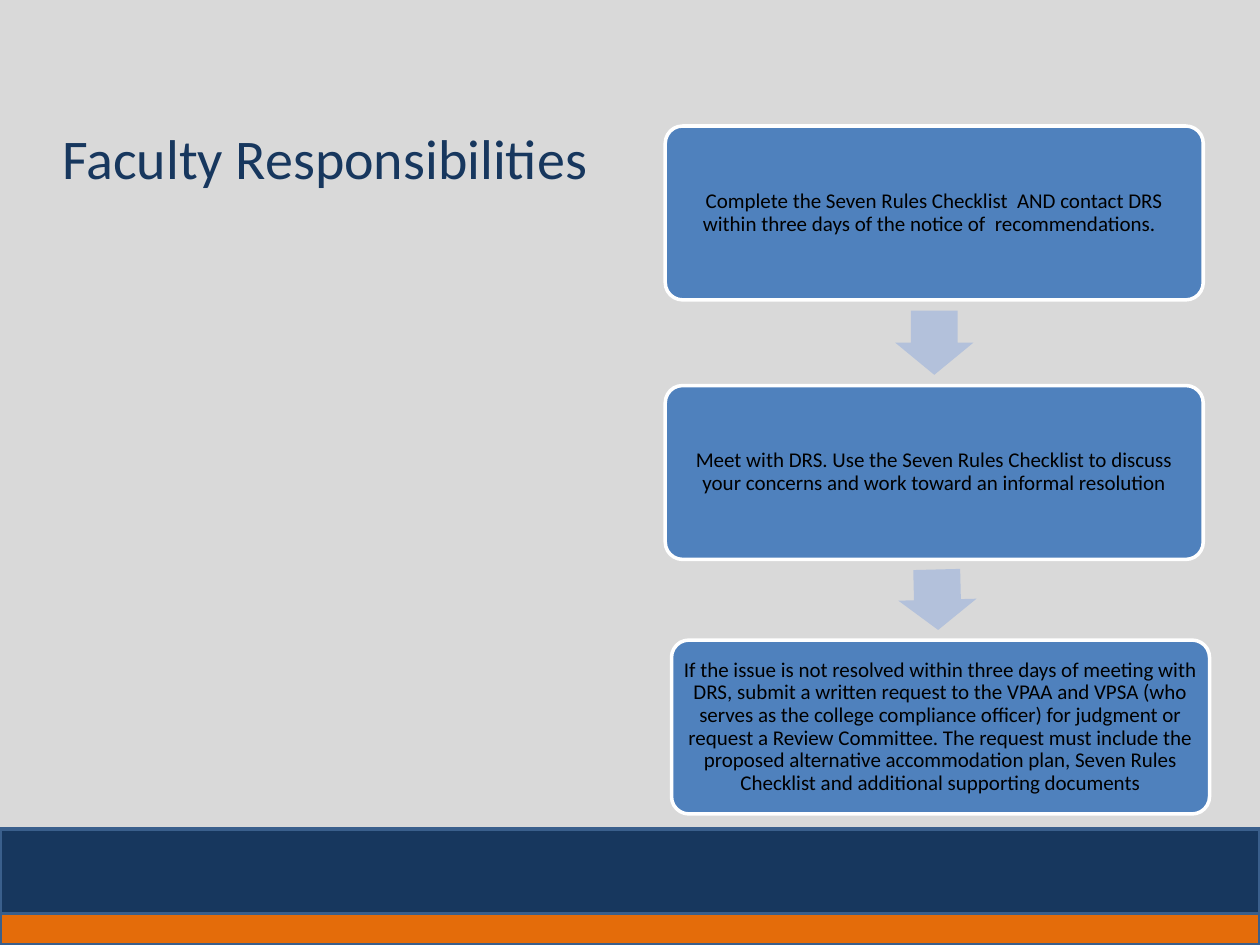
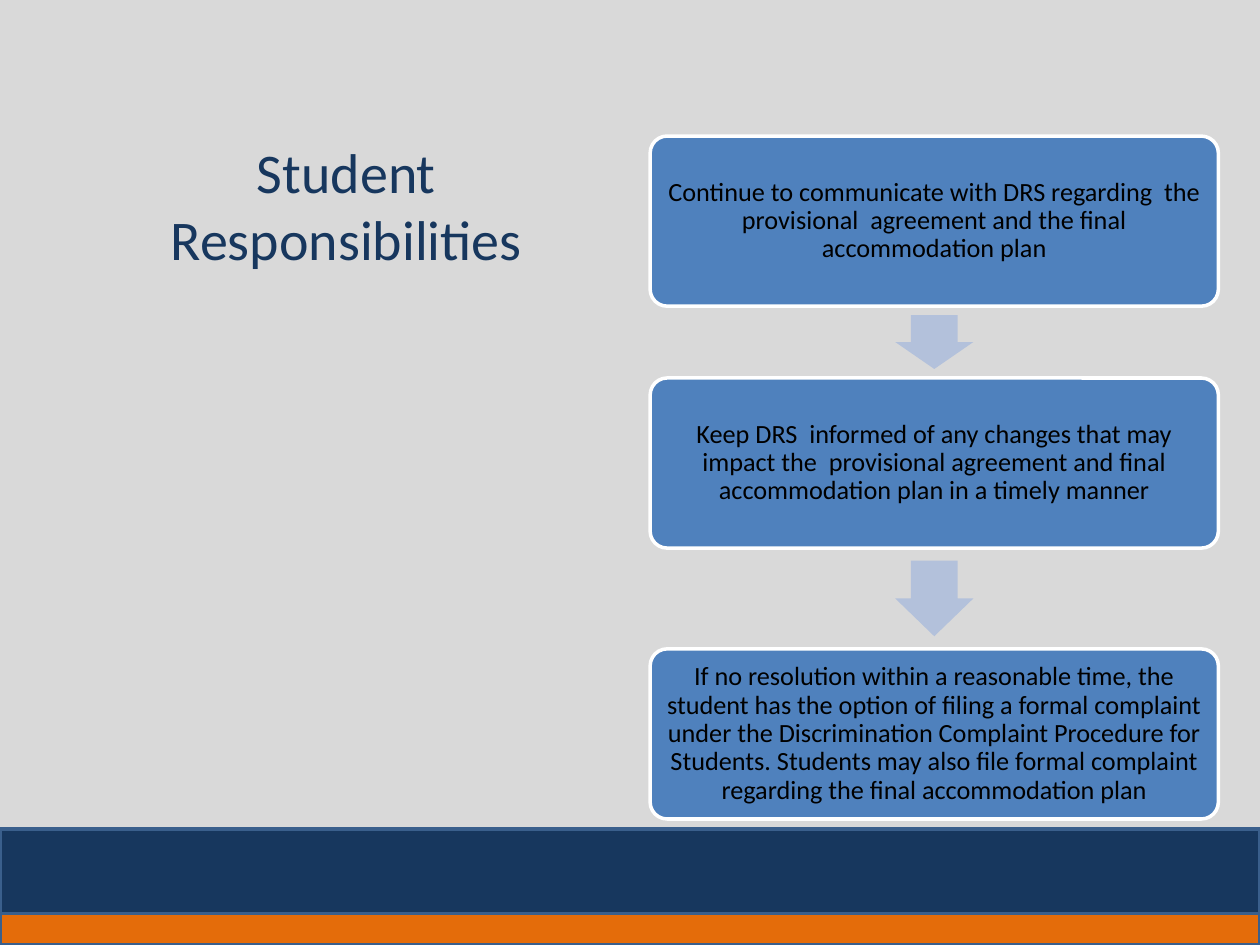
from dataclasses import dataclass
from itertools import pairwise
from math import atan2, degrees

from pptx import Presentation
from pptx.dml.color import RGBColor
from pptx.enum import shapes, text
from pptx.util import Inches, Pt

FONT = "Calibri"
BACKGROUND = RGBColor(0xD9, 0xD9, 0xD9)
NAVY = RGBColor(0x17, 0x37, 0x5E)
ORANGE = RGBColor(0xE4, 0x6C, 0x0A)
BAND_EDGE = RGBColor(0x3A, 0x5F, 0x8C)
STEP_BLUE = RGBColor(0x4F, 0x81, 0xBD)
ARROW_BLUE = RGBColor(0xB3, 0xC1, 0xDB)
WHITE = RGBColor(0xFF, 0xFF, 0xFF)
BLACK = RGBColor(0, 0, 0)

BAND_TOP = 6.58
ARROW_WIDTH = 0.62
ARROW_SHARE = 0.75  # part of the gap between two steps that an arrow fills


@dataclass(frozen=True)
class Step:
    left: float
    top: float
    wording: str


@dataclass(frozen=True)
class Duties:
    """One slide: a title and a column of steps of equal size."""
    title: str
    title_left: float
    title_top: float
    title_height: float
    title_anchor: text.MSO_ANCHOR
    title_inset: float
    step_width: float
    step_height: float
    step_inset: float
    step_size: int
    steps: tuple[Step, ...]


FACULTY = Duties(
    "Faculty Responsibilities", 0.33, 0.98, 1.03, text.MSO_ANCHOR.TOP, 0,
    4.27, 1.38, 0.05, 12,
    (
        Step(5.28, 1, "Complete the Seven Rules Checklist  AND contact DRS within "
                      "three days of the notice of  recommendations.  "),
        Step(5.28, 3.06, "Meet with DRS. Use the Seven Rules Checklist to discuss your "
                         "concerns and work toward an informal resolution"),
        Step(5.33, 5.08, "If the issue is not resolved within three days of meeting with "
                         "DRS, submit a written request to the VPAA and VPSA (who serves "
                         "as the college compliance officer) for judgment or request a "
                         "Review Committee. The request must include the proposed "
                         "alternative accommodation plan, Seven Rules Checklist and "
                         "additional supporting documents"),
    ),
)
STUDENT = Duties(
    "Student Responsibilities", 0.5, 1, 1.25, text.MSO_ANCHOR.MIDDLE, 0.05,
    4.51, 1.35, 0.06, 15,
    (
        Step(5.16, 1.08, "Continue to communicate with DRS regarding  the provisional  "
                         "agreement and the final accommodation plan"),
        Step(5.16, 3, "Keep DRS  informed of any changes that may impact the  provisional "
                      "agreement and final accommodation plan in a timely manner"),
        Step(5.16, 5.15, "If no resolution within a reasonable time, the student has the "
                         "option of filing a formal complaint under the Discrimination "
                         "Complaint Procedure for Students. Students may also file formal "
                         "complaint regarding the final accommodation plan"),
    ),
)


def add_preset(slide, kind, left: float, top: float, width: float, height: float,
               fill: RGBColor, edge: RGBColor | None = None):
    shape = slide.shapes.add_shape(
        kind, Inches(left), Inches(top), Inches(width), Inches(height))
    shape.shadow.inherit = False
    shape.fill.solid()
    shape.fill.fore_color.rgb = fill
    if edge is None:
        shape.line.fill.background()
    else:
        shape.line.color.rgb = edge
        shape.line.width = Pt(2)
    return shape


def write(shape, wording: str, size: int, color: RGBColor,
          anchor: text.MSO_ANCHOR, side_inset: float, end_inset: float):
    frame = shape.text_frame
    frame.word_wrap = True
    frame.auto_size = text.MSO_AUTO_SIZE.NONE
    frame.vertical_anchor = anchor
    frame.margin_left = frame.margin_right = Inches(side_inset)
    frame.margin_top = frame.margin_bottom = Inches(end_inset)
    frame.text = wording
    paragraph = frame.paragraphs[0]
    paragraph.alignment = text.PP_ALIGN.CENTER
    paragraph.font.name = FONT
    paragraph.font.size = Pt(size)
    paragraph.font.color.rgb = color
    return paragraph


def move_bands_to_master(deck, slide) -> None:
    """Draw the two footer bands on a slide, then hand them to the master."""
    behind_all = 2
    for height, fill in ((0.67, NAVY), (0.92, ORANGE)):
        band = add_preset(slide, shapes.MSO_SHAPE.RECTANGLE,
                          0, BAND_TOP, 10, height, fill, BAND_EDGE)
        deck.slide_master.shapes._spTree.insert(behind_all, band._element)


def add_step(slide, duties: Duties, step: Step) -> None:
    box = add_preset(slide, shapes.MSO_SHAPE.ROUNDED_RECTANGLE, step.left, step.top,
                     duties.step_width, duties.step_height, STEP_BLUE, WHITE)
    box.adjustments[0] = 0.1
    paragraph = write(box, step.wording, duties.step_size, BLACK,
                      text.MSO_ANCHOR.MIDDLE, duties.step_inset, duties.step_inset)
    paragraph.line_spacing = 0.9


def add_arrow(slide, duties: Duties, start: Step, end: Step) -> None:
    """Centre an arrow in the gap between two steps, pointing along their centres."""
    gap = end.top - start.top - duties.step_height
    height = gap * ARROW_SHARE
    center_x = (start.left + end.left + duties.step_width) / 2
    center_y = end.top - gap / 2
    arrow = add_preset(slide, shapes.MSO_SHAPE.DOWN_ARROW, center_x - ARROW_WIDTH / 2,
                       center_y - height / 2, ARROW_WIDTH, height, ARROW_BLUE)
    arrow.adjustments[0] = 0.6
    arrow.adjustments[1] = 0.5
    arrow.rotation = -degrees(atan2(end.left - start.left, end.top - start.top))


def add_duties(slide, duties: Duties) -> None:
    title = slide.shapes.title
    title.left, title.top = Inches(duties.title_left), Inches(duties.title_top)
    title.width, title.height = Inches(4.5), Inches(duties.title_height)
    write(title, duties.title, 32, NAVY, duties.title_anchor, 0.1, duties.title_inset)
    for step in duties.steps:
        add_step(slide, duties, step)
    for start, end in pairwise(duties.steps):
        add_arrow(slide, duties, start, end)


def main() -> None:
    deck = Presentation()
    deck.slide_width, deck.slide_height = Inches(10), Inches(7.5)
    backdrop = deck.slide_master.background.fill
    backdrop.solid()
    backdrop.fore_color.rgb = BACKGROUND
    title_only = deck.slide_layouts[5]
    for duties in (FACULTY, STUDENT):
        add_duties(deck.slides.add_slide(title_only), duties)
    move_bands_to_master(deck, deck.slides[0])
    deck.save("out.pptx")


if __name__ == "__main__":
    main()
